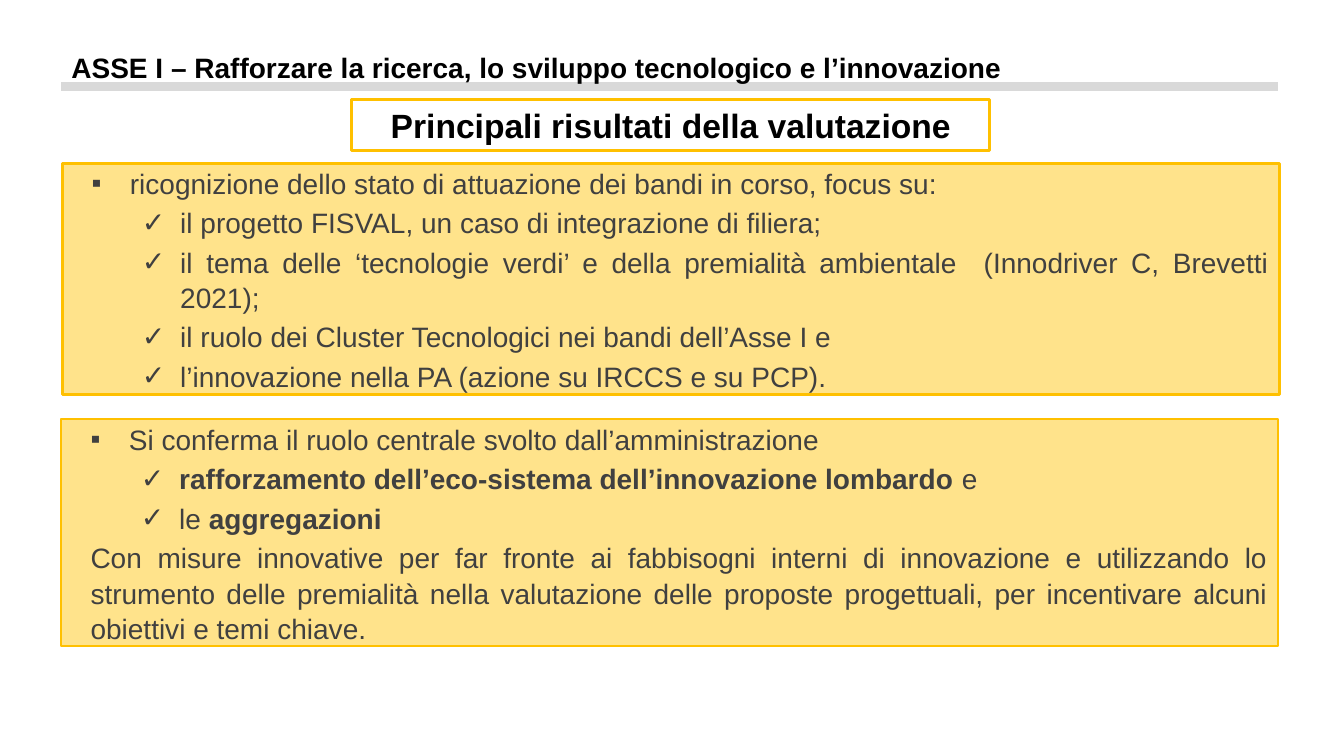
from dataclasses import dataclass

import pptx
import pptx.dml.color
import pptx.enum.shapes
import pptx.enum.text
import pptx.oxml
import pptx.oxml.ns
import pptx.util

Pt = pptx.util.Pt
RGBColor = pptx.dml.color.RGBColor
ALIGN = pptx.enum.text.PP_ALIGN
ANCHOR = pptx.enum.text.MSO_ANCHOR

BLACK = RGBColor(0x00, 0x00, 0x00)
WHITE = RGBColor(0xFF, 0xFF, 0xFF)
DARK_GREY = RGBColor(0x40, 0x40, 0x40)
LIGHT_GREY = RGBColor(0xD9, 0xD9, 0xD9)
AMBER = RGBColor(0xFF, 0xC0, 0x00)
PALE_AMBER = RGBColor(0xFF, 0xE3, 0x8B)

FONT = "Arial"
LEFT, WIDTH = 43.92, 869.04


@dataclass
class Style:
    """Level, margin and bullet of a paragraph."""
    level: int
    margin: float
    indent: float = 0
    bullet: str = ""


TOPIC = Style(1, 41.04, -27.36, "▪")
CHECK = Style(2, 77.04, -27.36, "✓")
PLAIN = Style(1, 13.68)


@dataclass
class Run:
    text: str
    bold: bool = False


@dataclass
class Para:
    style: Style
    runs: list[Run]


@dataclass
class Panel:
    left: float
    top: float
    height: float
    line: float
    paras: list[Para]


PANELS = [
    Panel(44.64, 116.64, 164.88, 2.25, [
        Para(TOPIC, [Run("ricognizione dello stato di attuazione dei bandi in corso, focus su:")]),
        Para(CHECK, [Run("il progetto FISVAL, un caso di integrazione di filiera;")]),
        Para(CHECK, [Run("il tema delle ‘tecnologie verdi’ e della premialità ambientale  "
                         "(Innodriver C, Brevetti 2021);")]),
        Para(CHECK, [Run("il ruolo dei Cluster Tecnologici nei bandi dell’Asse I e")]),
        Para(CHECK, [Run("l’innovazione nella PA (azione su IRCCS e su PCP).")]),
    ]),
    Panel(LEFT, 299.52, 162, 1.5, [
        Para(TOPIC, [Run("Si conferma il ruolo centrale svolto dall’amministrazione")]),
        Para(CHECK, [Run("rafforzamento dell’eco-sistema dell’innovazione lombardo ", True),
                     Run("e")]),
        Para(CHECK, [Run("le "), Run("aggregazioni", True)]),
        Para(PLAIN, [Run("Con misure innovative per far fronte ai fabbisogni interni di "
                         "innovazione e utilizzando lo strumento delle premialità nella "
                         "valutazione delle proposte progettuali, per incentivare alcuni "
                         "obiettivi e temi chiave.")]),
    ]),
]


def add_run(p, run: Run, size: float, color: RGBColor) -> None:
    r = p.add_run()
    r.text = run.text
    r.font.name = FONT
    r.font.size = Pt(size)
    r.font.bold = run.bold
    r.font.color.rgb = color


def add_box(slide, left: float, top: float, width: float, height: float,
            fill: RGBColor, line: float):
    sp = slide.shapes.add_shape(pptx.enum.shapes.MSO_SHAPE.RECTANGLE,
                                Pt(left), Pt(top), Pt(width), Pt(height))
    sp.shadow.inherit = False
    sp.fill.solid()
    sp.fill.fore_color.rgb = fill
    sp.line.color.rgb = AMBER
    sp.line.width = Pt(line)
    tf = sp.text_frame
    tf.word_wrap = True
    tf.vertical_anchor = ANCHOR.MIDDLE
    return tf


def format_para(p, style: Style) -> None:
    p.level = style.level
    p.alignment = ALIGN.JUSTIFY
    p.line_spacing = 1.05
    p.space_after = Pt(3)
    pPr = p._p.get_or_add_pPr()
    pPr.set("marL", str(Pt(style.margin)))
    pPr.set("indent", str(Pt(style.indent)))
    if style.bullet:
        font = pptx.oxml.parse_xml(
            f'<a:buFont {pptx.oxml.ns.nsdecls("a")} typeface="{FONT}"/>')
        char = pptx.oxml.parse_xml(
            f'<a:buChar {pptx.oxml.ns.nsdecls("a")} char="{style.bullet}"/>')
        pPr.extend([font, char])


def add_panel(slide, panel: Panel) -> None:
    tf = add_box(slide, panel.left, panel.top, WIDTH, panel.height, PALE_AMBER, panel.line)
    for i, para in enumerate(panel.paras):
        p = tf.add_paragraph() if i else tf.paragraphs[0]
        format_para(p, para.style)
        for run in para.runs:
            add_run(p, run, 20, DARK_GREY)


def add_header(slide) -> None:
    # Grey rule
    y = Pt(61.92)
    rule = slide.shapes.add_connector(pptx.enum.shapes.MSO_CONNECTOR.STRAIGHT,
                                      Pt(LEFT), y, Pt(LEFT + WIDTH), y)
    rule.line.color.rgb = LIGHT_GREY
    rule.line.width = Pt(6)
    rule._element.spPr.append(
        pptx.oxml.parse_xml(f'<a:effectLst {pptx.oxml.ns.nsdecls("a")}/>'))

    # Axis title
    tf = slide.shapes.add_textbox(Pt(LEFT), Pt(32.4), Pt(WIDTH), Pt(31.68)).text_frame
    tf.word_wrap = True
    add_run(tf.paragraphs[0],
            Run("ASSE I – Rafforzare la ricerca, lo sviluppo tecnologico e l’innovazione", True),
            20, BLACK)


def add_subtitle(slide) -> None:
    p = add_box(slide, 251.28, 71.28, 455.76, 36, WHITE, 2.25).paragraphs[0]
    p.alignment = ALIGN.CENTER
    add_run(p, Run("Principali risultati della valutazione", True), 24, BLACK)


def main() -> None:
    prs = pptx.Presentation()
    prs.slide_width, prs.slide_height = Pt(960), Pt(540)
    slide = prs.slides.add_slide(prs.slide_layouts[6])
    add_header(slide)
    for panel in PANELS:
        add_panel(slide, panel)
    add_subtitle(slide)
    prs.save("out.pptx")


if __name__ == "__main__":
    main()
